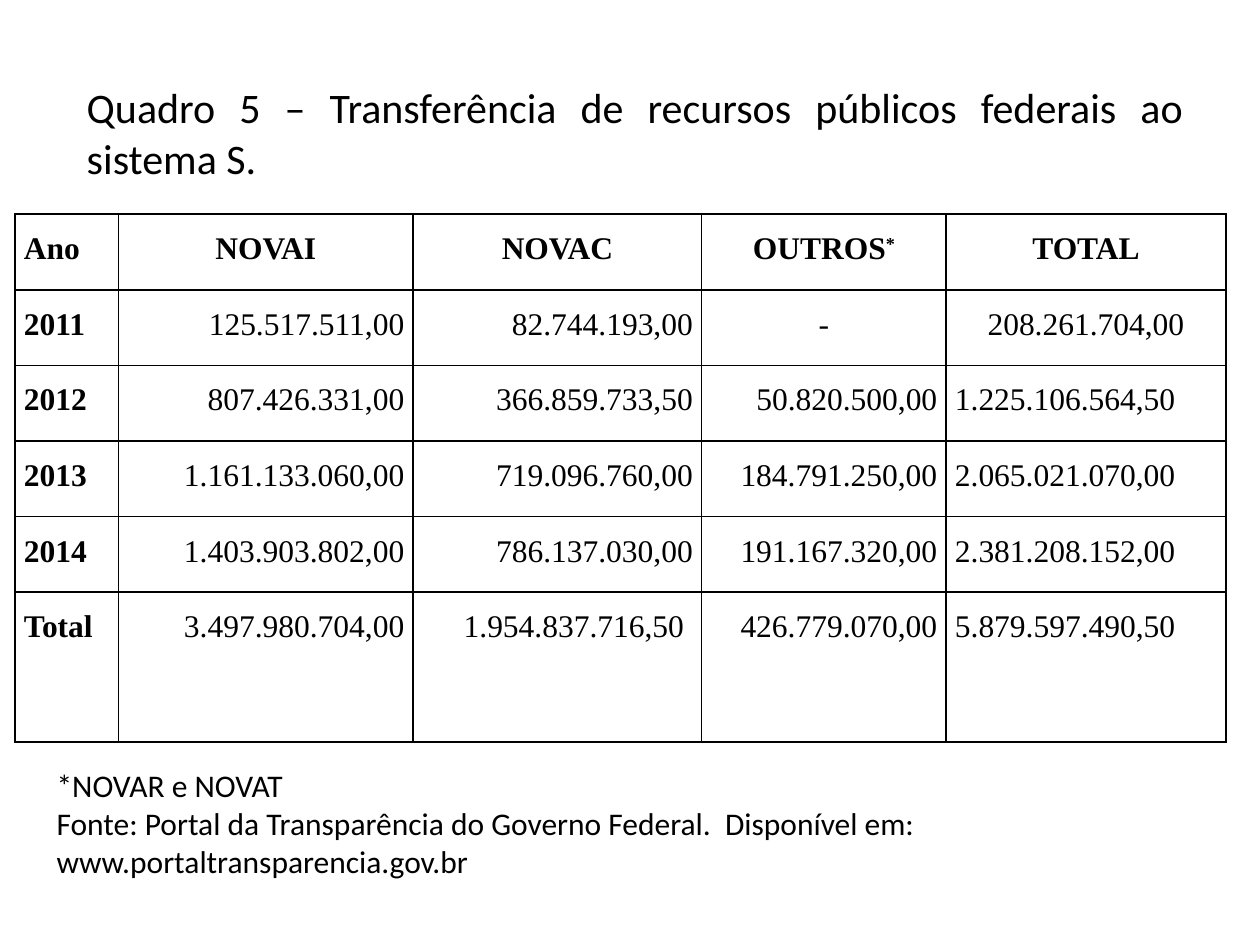
import lxml.etree
import pptx
import pptx.dml.color
import pptx.enum.text
import pptx.oxml.ns
import pptx.util

Inches = pptx.util.Inches
Pt = pptx.util.Pt
ALIGN = pptx.enum.text.PP_ALIGN
LEFT, CENTER, RIGHT, JUSTIFY = ALIGN.LEFT, ALIGN.CENTER, ALIGN.RIGHT, ALIGN.JUSTIFY
BLACK = pptx.dml.color.RGBColor(0, 0, 0)

TITLE = "Quadro 5 – Transferência de recursos públicos federais ao sistema S."
NOTES = [
    "*NOVAR e NOVAT",
    "Fonte: Portal da Transparência do Governo Federal.  Disponível em: "
    "www.portaltransparencia.gov.br",
]
HEADER = ["Ano", "NOVAI", "NOVAC", "OUTROS*", "TOTAL"]
TRANSFERS = [
    ["2011", "125.517.511,00", "82.744.193,00", "-", "208.261.704,00"],
    ["2012", "807.426.331,00", "366.859.733,50", "50.820.500,00", "1.225.106.564,50"],
    ["2013", "1.161.133.060,00", "719.096.760,00", "184.791.250,00", "2.065.021.070,00"],
    ["2014", "1.403.903.802,00", "786.137.030,00", "191.167.320,00", "2.381.208.152,00"],
    ["Total", "3.497.980.704,00", "1.954.837.716,50", "426.779.070,00", "5.879.597.490,50"],
]
COLUMN_WIDTHS = [0.82, 2.34, 2.29, 1.94, 2.22]
ROW_HEIGHTS = [0.6] * 5 + [1.19]
COLUMN_ALIGNS = [LEFT, RIGHT, RIGHT, RIGHT, LEFT]
CENTERED = {(1, 3), (1, 4)} | {(0, column) for column in range(1, 5)}
CELL_MARGIN = 0.07
EXTRA_RIGHT_MARGIN = {(5, 2): 0.07}


def write(frame, lines, size=18, font="Calibri", bold=False, align=LEFT, spacing=None):
    """Write one paragraph per line; an asterisk that ends a line is superscript."""
    frame.word_wrap = True
    for index, line in enumerate(lines):
        paragraph = frame.paragraphs[0] if index == 0 else frame.add_paragraph()
        paragraph.alignment = align
        paragraph.line_spacing = spacing
        parts = [line[:-1], "*"] if line.endswith("*") else [line]
        for part in parts:
            run = paragraph.add_run()
            run.text = part
            run.font.size = Pt(size)
            run.font.name = font
            run.font.bold = bold
            run.font.color.rgb = BLACK
            if part == "*":
                run.font._element.set("baseline", "30000")


def add_text(slide, box, lines, **text_format):
    frame = slide.shapes.add_textbox(*map(Inches, box)).text_frame
    write(frame, lines, **text_format)
    frame.auto_size = pptx.enum.text.MSO_AUTO_SIZE.SHAPE_TO_FIT_TEXT


def outline(cell):
    properties = cell._tc.get_or_add_tcPr()
    qn = pptx.oxml.ns.qn
    for side in ("a:lnL", "a:lnR", "a:lnT", "a:lnB"):
        line = lxml.etree.SubElement(properties, qn(side), w=str(Pt(1)))
        fill = lxml.etree.SubElement(line, qn("a:solidFill"))
        lxml.etree.SubElement(fill, qn("a:srgbClr"), val=str(BLACK))


def add_transfers(slide, left, top):
    rows = [HEADER] + TRANSFERS
    table = slide.shapes.add_table(
        len(rows), len(HEADER), Inches(left), Inches(top),
        Inches(sum(COLUMN_WIDTHS)), Inches(sum(ROW_HEIGHTS)),
    ).table
    table.first_row = table.horz_banding = False
    for column, width in zip(table.columns, COLUMN_WIDTHS):
        column.width = Inches(width)
    for row, height in zip(table.rows, ROW_HEIGHTS):
        row.height = Inches(height)
    for r, values in enumerate(rows):
        for c, value in enumerate(values):
            cell = table.cell(r, c)
            cell.margin_left = Inches(CELL_MARGIN)
            cell.margin_right = Inches(CELL_MARGIN + EXTRA_RIGHT_MARGIN.get((r, c), 0))
            cell.margin_top = cell.margin_bottom = 0
            outline(cell)
            cell.fill.background()
            write(cell.text_frame, [value], font="Times New Roman",
                  bold=r == 0 or c == 0, spacing=1.5,
                  align=CENTER if (r, c) in CENTERED else COLUMN_ALIGNS[c])


def main():
    deck = pptx.Presentation()
    deck.slide_width, deck.slide_height = Inches(10), Inches(7.5)
    slide = deck.slides.add_slide(deck.slide_layouts[6])
    add_transfers(slide, 0.12, 1.7)
    add_text(slide, (0.59, 0.6, 8.9, 0.91), [TITLE], size=24, align=JUSTIFY)
    add_text(slide, (0.35, 6.03, 9.29, 1.01), NOTES)
    deck.save("out.pptx")


if __name__ == "__main__":
    main()
